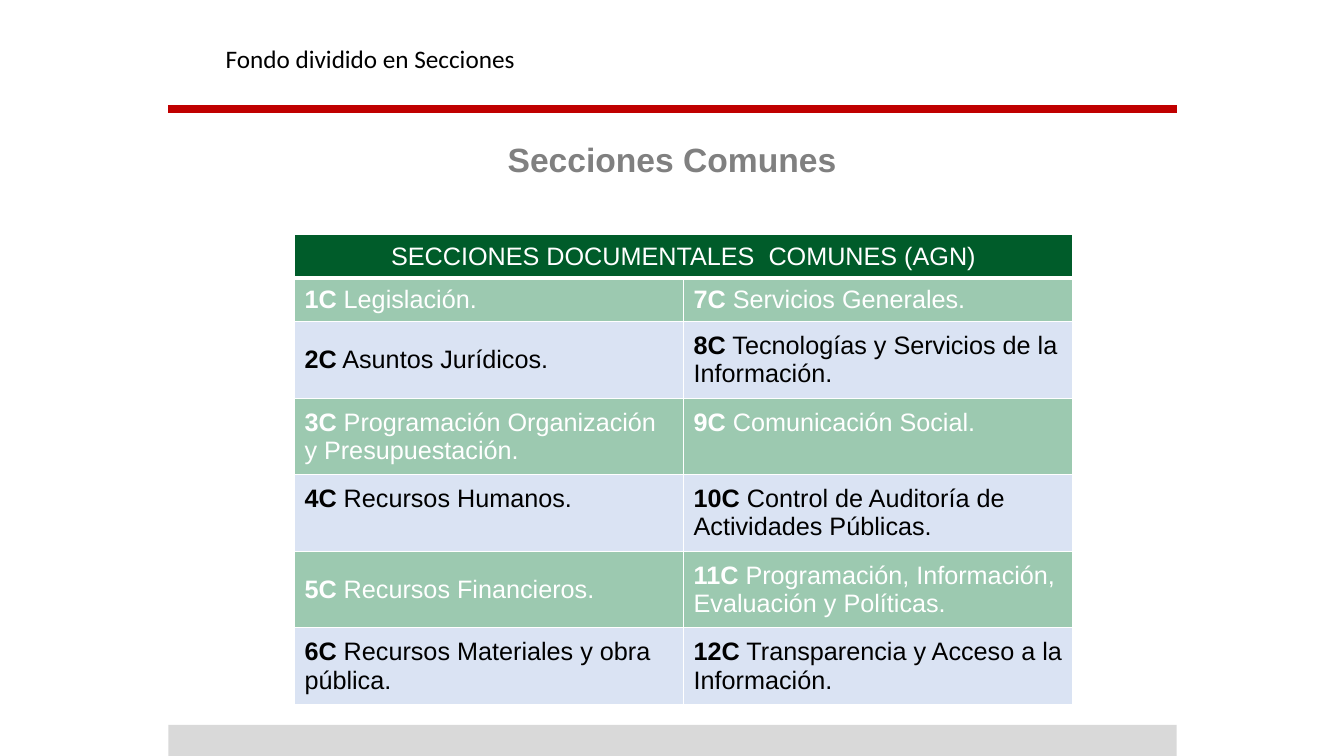
import pptx
import pptx.util
import pptx.dml.color
import pptx.enum.shapes
import pptx.enum.text
import pptx.oxml
import pptx.oxml.ns

PX = 9144  # EMU per px, 100 px to the inch
WHITE, BLACK, RED, GRAY, SILVER = "FFFFFF", "000000", "C00000", "808080", "D9D9D9"
HEADER_GREEN, ROW_GREEN, ROW_BLUE = "005C2A", "007635", "DAE3F3"
LEFT, WIDTH = 167, 1000
ROW_HEIGHTS = [43, 43] + [76] * 5

SECTIONS = [
    (("1C", "Legislación."), ("7C", "Servicios Generales.")),
    (("2C", "Asuntos Jurídicos."), ("8C", "Tecnologías y Servicios de la Información.")),
    (("3C", "Programación Organización y Presupuestación."), ("9C", "Comunicación Social.")),
    (("4C", "Recursos Humanos."), ("10C", "Control de Auditoría de Actividades Públicas.")),
    (("5C", "Recursos Financieros."),
     ("11C", "Programación, Información, Evaluación y Políticas.")),
    (("6C", "Recursos Materiales y obra pública."),
     ("12C", "Transparencia y Acceso a la Información.")),
]
TOP_ALIGNED = {"4C", "9C"}

ALIGN = pptx.enum.text.PP_ALIGN
ANCHOR = pptx.enum.text.MSO_ANCHOR


def rgb(color):
    return pptx.dml.color.RGBColor.from_string(color)


def px(*lengths):
    return [pptx.util.Emu(n * PX) for n in lengths]


class SlideBuilder:
    def __init__(self, slide, font):
        self.s = slide
        self.font = font

    def style(self, r, size, color, bold=False, font=None):
        r.font.name = font or self.font
        r.font.size = pptx.util.Pt(size)
        r.font.bold = bold
        r.font.color.rgb = rgb(color)

    def title(self, text, box, size, color):
        sp = self.s.shapes.title
        sp.left, sp.top, sp.width, sp.height = px(*box)
        tf = sp.text_frame
        tf.text = text
        tf.vertical_anchor = ANCHOR.TOP
        p = tf.paragraphs[0]
        p.alignment = ALIGN.CENTER
        self.style(p.runs[0], size, color, bold=True)

    def label(self, text, box, size, color, font):
        tf = self.s.shapes.add_textbox(*px(*box)).text_frame
        tf.word_wrap = False
        tf.text = text
        self.style(tf.paragraphs[0].runs[0], size, color, font=font)

    def rule(self, x1, y1, x2, y2, color, weight):
        kind = pptx.enum.shapes.MSO_CONNECTOR.STRAIGHT
        line = self.s.shapes.add_connector(kind, *px(x1, y1, x2, y2))
        line.line.color.rgb = rgb(color)
        line.line.width = pptx.util.Pt(weight)
        line._element.spPr.append(pptx.oxml.parse_xml(
            f'<a:effectLst {pptx.oxml.ns.nsdecls("a")}/>'))

    def bar(self, box, color):
        sp = self.s.shapes.add_shape(pptx.enum.shapes.MSO_SHAPE.RECTANGLE, *px(*box))
        sp.shadow.inherit = False
        sp.fill.solid()
        sp.fill.fore_color.rgb = rgb(color)
        sp.line.fill.background()

    def table(self, left, top, col_widths, row_heights):
        box = px(left, top, sum(col_widths), sum(row_heights))
        table = self.s.shapes.add_table(len(row_heights), len(col_widths), *box).table
        for col, width in zip(table.columns, px(*col_widths)):
            col.width = width
        for row, height in zip(table.rows, px(*row_heights)):
            row.height = height
        return table

    def paint_cell(self, cell, color, alpha=None, top=1, bottom=1):
        """Draw white borders, then the fill, in the order the schema asks for."""
        tcPr = cell._tc.get_or_add_tcPr()
        for side, weight in zip("LRTB", (1, 1, top, bottom)):
            tcPr.append(pptx.oxml.parse_xml(
                f'<a:ln{side} {pptx.oxml.ns.nsdecls("a")} w="{weight * 12700}">'
                f'<a:solidFill><a:srgbClr val="{WHITE}"/></a:solidFill></a:ln{side}>'))
        cell.fill.solid()
        cell.fill.fore_color.rgb = rgb(color)
        if alpha:
            tcPr.find(pptx.oxml.ns.qn("a:solidFill"))[0].append(pptx.oxml.parse_xml(
                f'<a:alpha {pptx.oxml.ns.nsdecls("a")} val="{alpha * 1000}"/>'))
        cell.vertical_anchor = ANCHOR.MIDDLE

    def section_cell(self, cell, code, name, color):
        p = cell.text_frame.paragraphs[0]
        for text, bold in ((code, True), (" " + name, False)):
            r = p.add_run()
            r.text = text
            self.style(r, 18, color, bold)
        if code in TOP_ALIGNED:
            cell.vertical_anchor = ANCHOR.TOP
            cell.margin_top = px(10)[0]


def main():
    prs = pptx.Presentation()
    prs.slide_width, prs.slide_height = px(1333, 750)
    b = SlideBuilder(prs.slides.add_slide(prs.slide_layouts[5]), "Arial")

    b.rule(LEFT, 108, LEFT + WIDTH, 108, RED, 5.25)
    b.bar((LEFT, 719, WIDTH, 31), SILVER)
    b.title("Secciones Comunes", (221, 133, 891, 50), 24, GRAY)

    table = b.table(292, 233, [386, 386], ROW_HEIGHTS)
    header = table.cell(0, 0)
    header.merge(table.cell(0, 1))
    for col in range(2):
        b.paint_cell(table.cell(0, col), HEADER_GREEN, bottom=3)
    header.text_frame.text = "SECCIONES DOCUMENTALES  COMUNES (AGN)"
    p = header.text_frame.paragraphs[0]
    p.alignment = ALIGN.CENTER
    b.style(p.runs[0], 18, WHITE)

    for row, pair in enumerate(SECTIONS, 1):
        fill, alpha, color = (ROW_GREEN, 39, WHITE) if row % 2 else (ROW_BLUE, None, BLACK)
        for col, (code, name) in enumerate(pair):
            cell = table.cell(row, col)
            b.paint_cell(cell, fill, alpha, top=3 if row == 1 else 1)
            b.section_cell(cell, code, name, color)

    b.label("Fondo dividido en Secciones", (214, 38, 311, 40), 18, BLACK, "Calibri")
    prs.save("out.pptx")


if __name__ == "__main__":
    main()
